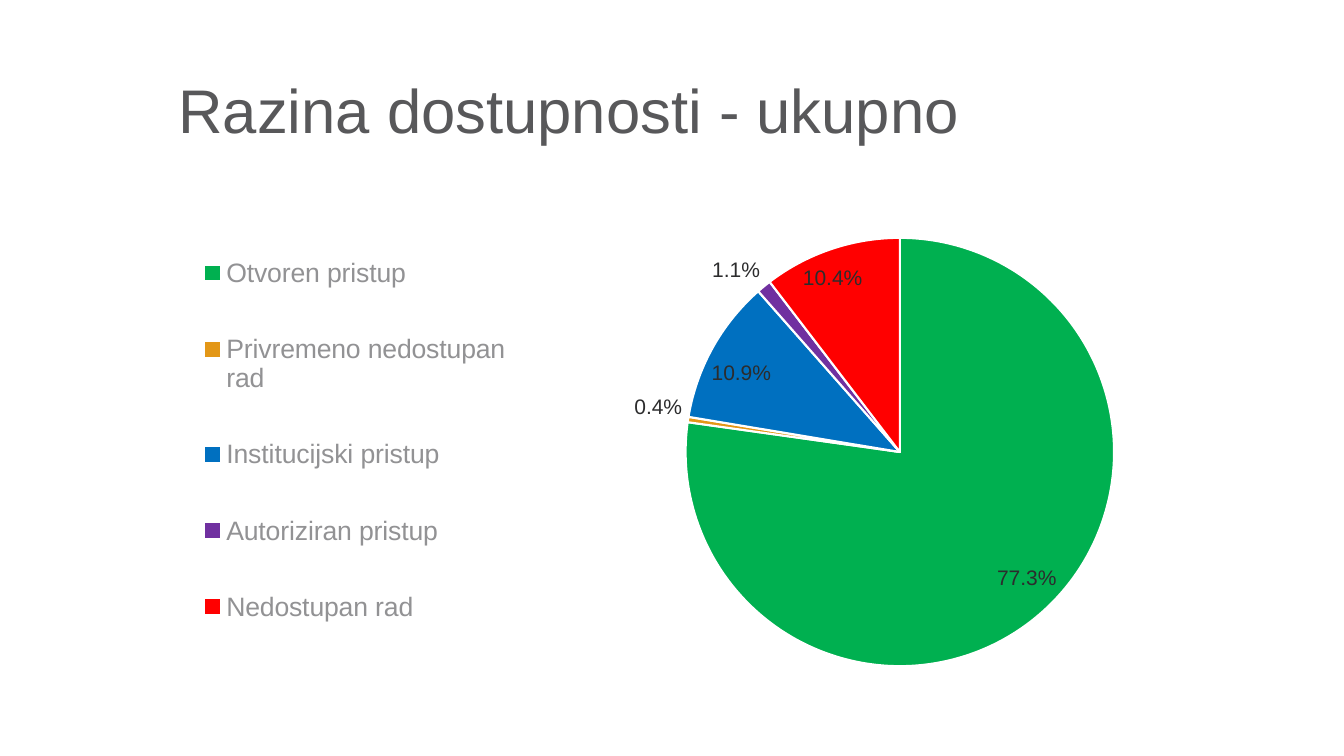
"""Build a slide with a pie chart of access levels."""
from dataclasses import dataclass
from typing import Any

from lxml import etree
from pptx import Presentation
from pptx import util as u
from pptx.chart.data import CategoryChartData
from pptx.dml.color import RGBColor
from pptx.enum import chart as charts
from pptx.enum import text
from pptx.oxml.ns import qn

COLORS = {
    "title": "58585A", "legend": "929294", "label": "2C2C2D", "white": "FFFFFF",
    "green": "00B050", "orange": "E39717", "blue": "0070C0",
    "purple": "7030A0", "red": "FF0000",
}


@dataclass(frozen=True)
class AccessLevel:
    name: str
    share: float
    color: str


@dataclass(frozen=True)
class Box:
    left: float
    top: float
    width: float
    height: float

    def inches(self) -> tuple[u.Inches, ...]:
        return tuple(u.Inches(value) for value in (self.left, self.top, self.width, self.height))


LEVELS = (
    AccessLevel("Otvoren pristup", 0.773, "green"),
    AccessLevel("Privremeno nedostupan rad", 0.004, "orange"),
    AccessLevel("Institucijski pristup", 0.109, "blue"),
    AccessLevel("Autoriziran pristup", 0.011, "purple"),
    AccessLevel("Nedostupan rad", 0.104, "red"),
)
TITLE_BOX = Box(1.67, 0.4, 10.75, 1.45)
CHART_BOX = Box(1.67, 2, 10.74, 4.76)
PIE_BOX = Box(6.8, 2.36, 4.25, 4.25)
LEGEND_BOX = Box(1.87, 2.1, 3.3, 4.53)


def set_format(target: Any, values: dict[str, Any]) -> None:
    for name, value in values.items():
        setattr(target, name, value)


def set_font(font: Any, size: float, color: str) -> None:
    set_format(font, {"name": "Arial", "size": u.Pt(size), "bold": False})
    font.color.rgb = RGBColor.from_string(COLORS[color])


def place_in_chart(parent: Any, box: Box, position: int, inner: bool = False) -> None:
    for old_layout in parent.findall(qn("c:layout")):
        parent.remove(old_layout)
    layout = etree.Element(qn("c:layout"))
    manual = etree.SubElement(layout, qn("c:manualLayout"))
    values = {"layoutTarget": "inner"} if inner else {}
    values |= {
        "xMode": "edge",
        "yMode": "edge",
        "x": (box.left - CHART_BOX.left) / CHART_BOX.width,
        "y": (box.top - CHART_BOX.top) / CHART_BOX.height,
        "w": box.width / CHART_BOX.width,
        "h": box.height / CHART_BOX.height,
    }
    for name, value in values.items():
        etree.SubElement(manual, qn(f"c:{name}")).set("val", str(value))
    parent.insert(position, layout)


def add_title(slide: Any, title: str) -> None:
    frame = slide.shapes.add_textbox(*TITLE_BOX.inches()).text_frame
    set_format(frame, {"word_wrap": True, "vertical_anchor": text.MSO_ANCHOR.MIDDLE})
    paragraph = frame.paragraphs[0]
    set_format(paragraph, {"text": title, "line_spacing": 0.9})
    set_font(paragraph.runs[0].font, 44, "title")


def add_access_chart(slide: Any) -> None:
    data = CategoryChartData(number_format="0.0%")
    data.categories = [level.name for level in LEVELS]
    data.add_series("Series 1", [level.share for level in LEVELS])
    chart = slide.shapes.add_chart(
        charts.XL_CHART_TYPE.PIE, *CHART_BOX.inches(), data
    ).chart
    set_format(chart, {"has_title": False, "has_legend": True})
    set_font(chart.font, 10, "title")
    set_format(chart.legend, {
        "position": charts.XL_LEGEND_POSITION.LEFT, "include_in_layout": False,
    })
    set_font(chart.legend.font, 19, "legend")

    plot = chart.plots[0]
    plot.vary_by_categories = True
    series = plot.series[0]
    for index, level in enumerate(LEVELS):
        slice_format = series.points[index].format
        slice_format.fill.solid()
        slice_format.fill.fore_color.rgb = RGBColor.from_string(COLORS[level.color])
        slice_format.line.color.rgb = RGBColor.from_string(COLORS["white"])
        slice_format.line.width = u.Pt(1.5)

    labels = series.data_labels
    set_font(labels.font, 15, "label")
    set_format(labels, {
        "show_value": True, "show_percentage": False,
        "number_format": "0.0%", "number_format_is_linked": False,
        "position": charts.XL_LABEL_POSITION.BEST_FIT,
    })
    plot_area = chart.element.find(f".//{qn('c:plotArea')}")
    legend = chart.element.find(f".//{qn('c:legend')}")
    place_in_chart(plot_area, PIE_BOX, 0, inner=True)
    place_in_chart(legend, LEGEND_BOX, 1)


def main() -> None:
    presentation = Presentation()
    set_format(presentation, {
        "slide_width": u.Inches(13.33), "slide_height": u.Inches(7.5),
    })
    slide = presentation.slides.add_slide(presentation.slide_layouts[6])
    add_title(slide, "Razina dostupnosti - ukupno")
    add_access_chart(slide)
    presentation.save("out.pptx")


if __name__ == "__main__":
    main()
